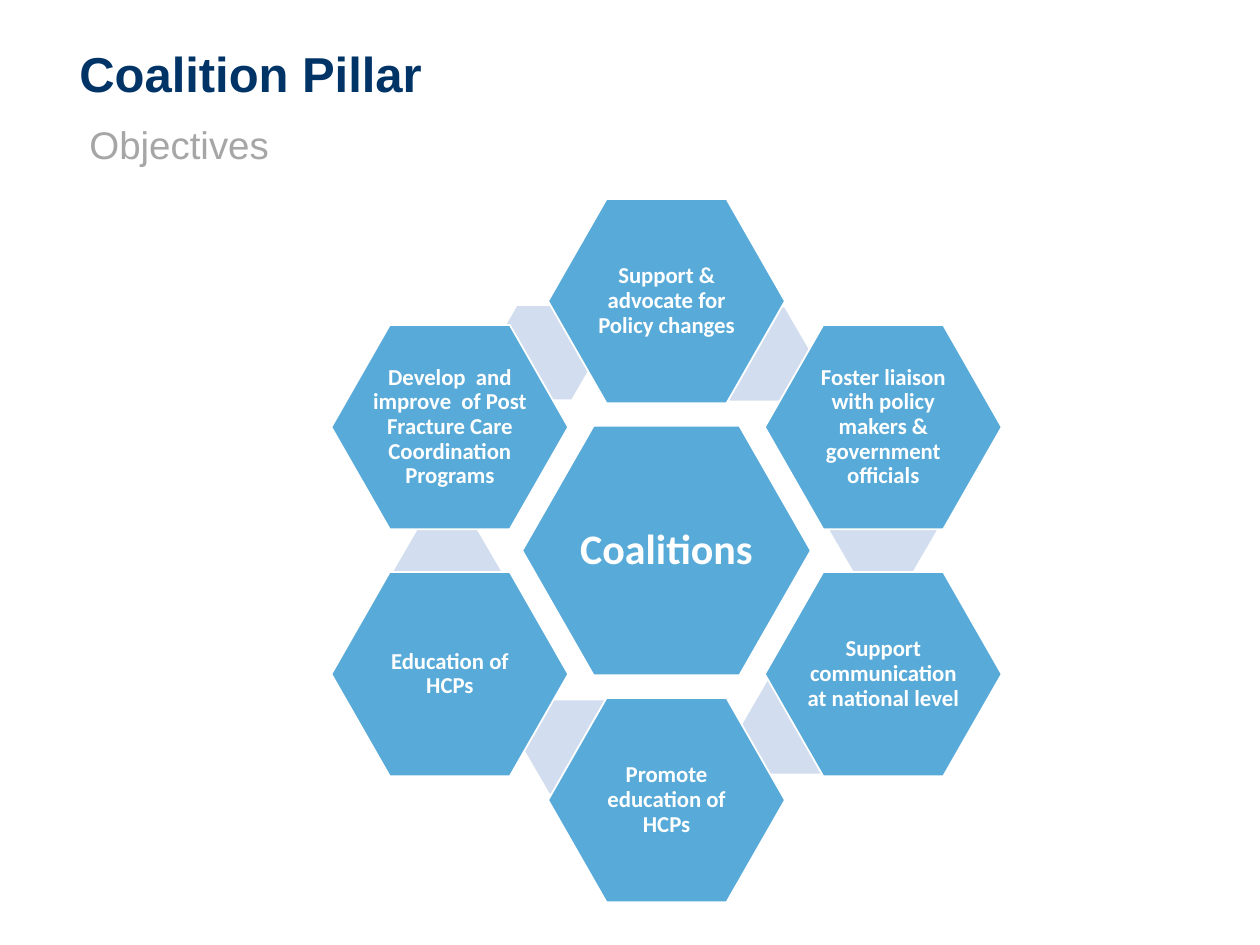
from pptx import Presentation
from pptx import util as u
from pptx.dml.color import RGBColor
from pptx.enum import shapes, text

NAVY = RGBColor(0x00, 0x33, 0x66)
GREY = RGBColor(0xA6, 0xA6, 0xA6)
BLUE = RGBColor(0x58, 0xAA, 0xD8)
PALE = RGBColor(0xD2, 0xDE, 0xEF)
WHITE = RGBColor(0xFF, 0xFF, 0xFF)

OBJECTIVES = [
    (0, -1.98, "Support & advocate for Policy changes"),
    (1.72, -0.98, "Foster liaison with policy makers & government officials"),
    (1.72, 0.98, "Support communication at national level"),
    (0, 1.98, "Promote education of HCPs"),
    (-1.72, 0.98, "Education of HCPs"),
    (-1.72, -0.98, "Develop  and improve  of Post Fracture Care Coordination Programs"),
]
LINKS = [(-0.97, -1.57), (0.72, -1.56), (1.72, -0.17),
         (1.02, 1.4), (-0.71, 1.56), (-1.74, 0.17)]


def write(box, words, *, size, color, font, bold=False,
          align=text.PP_ALIGN.LEFT, anchor=text.MSO_ANCHOR.TOP, inset=None):
    """Fill a shape with one formatted paragraph."""
    frame = box.text_frame
    frame.word_wrap = True
    frame.auto_size = text.MSO_AUTO_SIZE.NONE
    frame.vertical_anchor = anchor
    if inset is not None:
        frame.margin_left = frame.margin_right = u.Inches(inset)
        frame.margin_top = frame.margin_bottom = u.Inches(inset)
    para = frame.paragraphs[0]
    para.alignment = align
    para.line_spacing = 0.9
    para.space_before = u.Pt(0)
    span = para.add_run()
    span.text = words
    span.font.name = font
    span.font.size = u.Pt(size)
    span.font.bold = bold
    span.font.color.rgb = color


def place(box, left, top, width, height):
    """Move and size a shape, in inches."""
    box.left, box.top = u.Inches(left), u.Inches(top)
    box.width, box.height = u.Inches(width), u.Inches(height)


def add_hexagon(page, x, y, width, height, fill, slant, outline=None):
    """Add a hexagon centred on a point."""
    hexagon = page.shapes.add_shape(
        shapes.MSO_SHAPE.HEXAGON, u.Inches(x - width / 2), u.Inches(y - height / 2),
        u.Inches(width), u.Inches(height))
    hexagon.adjustments[0] = slant
    hexagon.shadow.inherit = False
    hexagon.fill.solid()
    hexagon.fill.fore_color.rgb = fill
    if outline is None:
        hexagon.line.fill.background()
    else:
        hexagon.line.color.rgb = outline
        hexagon.line.width = u.Pt(1)
    return hexagon


def add_heading(page, left, top, width):
    """Place the title and the subtitle below it."""
    title, subtitle = page.shapes.title, page.placeholders[1]
    place(title, left, top, width, 0.54)
    write(title, "Coalition Pillar", size=28, color=NAVY, font="Arial",
          bold=True, anchor=text.MSO_ANCHOR.BOTTOM)
    place(subtitle, left + 0.08, top + 0.62, width, 0.55)
    write(subtitle, "Objectives", size=22, color=GREY, font="Arial")


def add_ring(page, left, top, width, height):
    """Draw the hub, the objectives around it and the links behind them."""
    x, y = left + width / 2, top + height / 2
    label = dict(color=WHITE, font="Calibri", bold=True,
                 align=text.PP_ALIGN.CENTER, anchor=text.MSO_ANCHOR.MIDDLE)
    for dx, dy in LINKS:
        add_hexagon(page, x + dx, y + dy, 0.86, 0.74, PALE, 0.29)
    hub = add_hexagon(page, x, y, 2.29, 1.98, BLUE, 0.286, WHITE)
    write(hub, "Coalitions", size=24, inset=0.03, **label)
    for dx, dy, words in OBJECTIVES:
        objective = add_hexagon(page, x + dx, y + dy, 1.88, 1.62, BLUE, 0.286, WHITE)
        write(objective, words, size=13, inset=0.02, **label)


def main():
    """Build and save the slide."""
    deck = Presentation()
    deck.slide_width, deck.slide_height = u.Inches(10), u.Inches(7.5)
    page = deck.slides.add_slide(deck.slide_layouts[0])
    add_heading(page, 0.53, 0.33, 8.96)
    add_ring(page, 2.62, 1.58, 5.34, 5.58)
    deck.save("out.pptx")


if __name__ == "__main__":
    main()
